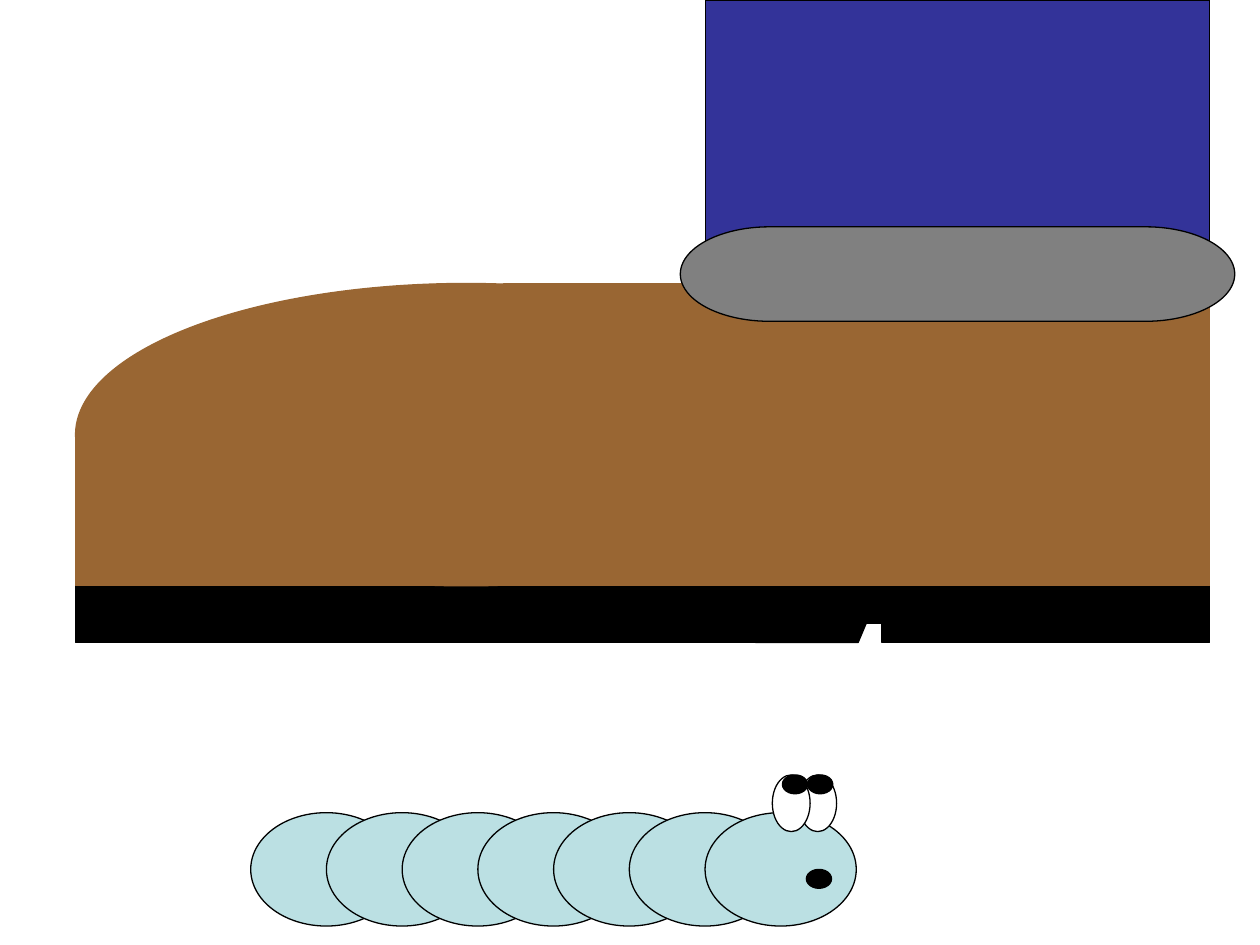
"""Build a slide of a boot about to step on a caterpillar."""
from pptx import Presentation
from pptx import util as u
from pptx.dml.color import RGBColor
from pptx.enum import shapes

THEME = {
    "skin": "BBE0E3",
    "white": "FFFFFF",
    "black": "000000",
    "trousers": "333399",
    "leather": "996633",
    "cuff": "808080",
    "outline": 0.75,
}
COLUMNS, ROWS = 100, 75
KIND = shapes.MSO_SHAPE

presentation = Presentation()
presentation.slide_width = u.Inches(10)
presentation.slide_height = u.Inches(7.5)
column = presentation.slide_width / COLUMNS
row = presentation.slide_height / ROWS
slide = presentation.slides.add_slide(presentation.slide_layouts[6])


def add_part(kind, left, top, width, height, fill, line="black"):
    shape = slide.shapes.add_shape(
        kind, round(left * column), round(top * row),
        round(width * column), round(height * row))
    shape.shadow.inherit = False
    shape.fill.solid()
    shape.fill.fore_color.rgb = RGBColor.from_string(THEME[fill])
    shape.line.color.rgb = RGBColor.from_string(THEME[line])
    shape.line.width = u.Pt(THEME["outline"])
    return shape


for segment in range(7):
    add_part(KIND.OVAL, 19.9 + 6.01 * segment, 64.5, 12, 9, "skin")

for eye_left in (63.4, 61.3):
    add_part(KIND.OVAL, eye_left, 61.5, 3, 4.5, "white")
for pupil_left in (64.1, 62.1):
    add_part(KIND.FLOWCHART_CONNECTOR, pupil_left, 61.5, 2, 1.5, "black")
add_part(KIND.OVAL, 64, 69, 2, 1.5, "black")

add_part(KIND.RECTANGLE, 56, 0, 40, 21, "trousers")

for sole_left, sole_width in ((6, 60), (70, 26)):
    add_part(KIND.RECTANGLE, sole_left, 46.5, sole_width, 4.5, "black")
notch_edge = add_part(KIND.PARALLELOGRAM, 60, 46.5, 10, 4.5, "black")
notch_edge.adjustments[0] = 0.42
add_part(KIND.RECTANGLE, 66, 46.5, 4, 3, "black")

for kind, left, top, width, height in (
    (KIND.OVAL, 6, 22.5, 62, 24),
    (KIND.RECTANGLE, 6, 34.5, 90, 12),
    (KIND.RECTANGLE, 40, 22.5, 56, 13.5),
):
    add_part(kind, left, top, width, height, "leather", "leather")

add_part(KIND.FLOWCHART_TERMINATOR, 54, 18, 44, 7.5, "cuff")

presentation.save("out.pptx")
